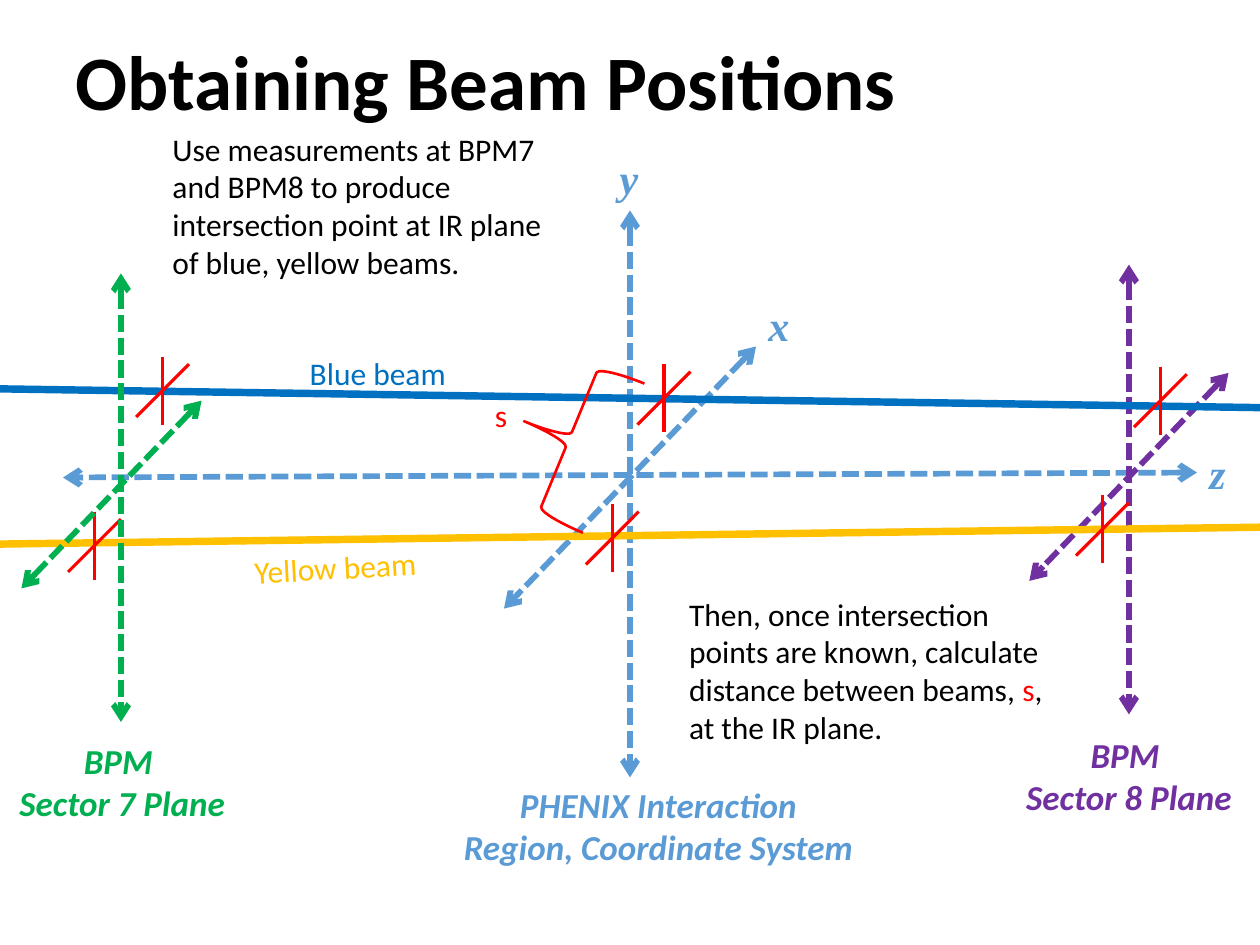
from dataclasses import dataclass

from lxml.etree import SubElement
from pptx import Presentation
from pptx.dml.color import RGBColor
from pptx.enum.dml import MSO_LINE
from pptx.enum.shapes import MSO_CONNECTOR, MSO_SHAPE
from pptx.enum.text import MSO_ANCHOR, MSO_AUTO_SIZE, PP_ALIGN
from pptx.oxml.ns import qn
from pptx.slide import Slide
from pptx.text.text import _Paragraph
from pptx.util import Inches, Pt

BLACK = RGBColor(0x00, 0x00, 0x00)
RED = RGBColor(0xFF, 0x00, 0x00)
AXIS_BLUE = RGBColor(0x5B, 0x9B, 0xD5)
BEAM_BLUE = RGBColor(0x00, 0x70, 0xC0)
BEAM_YELLOW = RGBColor(0xFF, 0xC0, 0x00)
SECTOR_GREEN = RGBColor(0x00, 0xB0, 0x50)
SECTOR_PURPLE = RGBColor(0x70, 0x30, 0xA0)

SLIDE_WIDTH = Inches(10)
SLIDE_HEIGHT = Inches(7.5)
COLUMN = SLIDE_WIDTH / 100
ROW = SLIDE_HEIGHT / 75

CROSS_SLANT = 2.1
CROSS_REACH = 2.7


@dataclass(frozen=True)
class Line:
    start: tuple[float, float]
    end: tuple[float, float]
    color: RGBColor
    weight: float = 3.25
    is_axis: bool = True


@dataclass(frozen=True)
class Label:
    area: tuple[float, float, float, float]
    lines: tuple[str, ...]
    color: RGBColor
    size: float = 18
    font: str = "Calibri"
    emphasis: bool = False
    centered: bool = False
    wrap: bool = False
    rotation: float = 0


AXES = (
    Line((50, 16.7), (50, 61.7), AXIS_BLUE),
    Line((95, 37.5), (5, 37.9), AXIS_BLUE),
    Line((60, 27.5), (40, 48.3), AXIS_BLUE),
    Line((97.5, 29.6), (81.7, 46.1), SECTOR_PURPLE),
    Line((89.6, 21), (89.6, 56.7), SECTOR_PURPLE),
)
BEAMS = (
    Line((-4.2, 30.8), (110, 32.5), BEAM_BLUE, 4.25, False),
    Line((-8.8, 43.3), (110.8, 41.7), BEAM_YELLOW, 4.25, False),
)
SECTOR_7_AXES = (
    Line((9.6, 21.7), (9.6, 57.3), SECTOR_GREEN),
    Line((16, 31.8), (1.7, 46.7), SECTOR_GREEN),
)
CROSSINGS = (
    (48.6, 42.7), (52.7, 31.6),
    (87.5, 42), (92.1, 31.8),
    (7.5, 43.3), (12.9, 31),
)
LABELS = (
    Label((95, 35, 3.3, 5), ("z",), AXIS_BLUE, 24, "Times New Roman", True),
    Label((60, 23.3, 3.7, 5), ("x",), AXIS_BLUE, 24, "Times New Roman", True),
    Label((48.2, 11.6, 3.5, 5), ("y",), AXIS_BLUE, 24, "Times New Roman", True),
    Label((35.7, 61.7, 33.1, 7.7),
          ("PHENIX Interaction", "Region, Coordinate System"),
          AXIS_BLUE, 20, emphasis=True, centered=True),
    Label((80.2, 57.7, 18.8, 7.7), ("BPM ", "Sector 8 Plane"),
          SECTOR_PURPLE, 20, emphasis=True, centered=True),
    Label((0.3, 58.2, 18.8, 7.7), ("BPM ", "Sector 7 Plane"),
          SECTOR_GREEN, 20, emphasis=True, centered=True),
    Label((12.7, 9.8, 31.5, 13.1),
          ("Use measurements at BPM7 and BPM8 to produce intersection point "
           "at IR plane of blue, yellow beams.",), BLACK, wrap=True),
    Label((23.6, 27.6, 13, 4), ("Blue beam",), BEAM_BLUE),
    Label((19.2, 43, 15, 4), ("Yellow beam",), BEAM_YELLOW, rotation=356.8),
    Label((38.3, 30.9, 3, 4), ("s",), RED),
)
DISTANCE_NOTE = Label((53.7, 46.7, 31.5, 13.1), (), BLACK, wrap=True)
DISTANCE_RUNS = (
    ("Then, once intersection points are known, calculate distance between beams, ", BLACK),
    ("s", RED),
    (", at the IR plane.", BLACK),
)


def place(*lengths: float) -> list[int]:
    return [round(length * (ROW if index % 2 else COLUMN))
            for index, length in enumerate(lengths)]


def add_run(paragraph: _Paragraph, text: str, color: RGBColor, size: float,
            font: str = "Calibri", bold: bool = False, italic: bool = False) -> None:
    run = paragraph.add_run()
    run.text = text
    run.font.name = font
    run.font.size = Pt(size)
    run.font.bold = bold
    run.font.italic = italic
    run.font.color.rgb = color


def draw_title(slide: Slide, text: str) -> None:
    title = slide.shapes.title
    title.left, title.top, title.width, title.height = place(5, 3, 90, 12.5)
    frame = title.text_frame
    frame.auto_size = MSO_AUTO_SIZE.NONE
    frame.vertical_anchor = MSO_ANCHOR.TOP
    paragraph = frame.paragraphs[0]
    paragraph.alignment = PP_ALIGN.LEFT
    paragraph.line_spacing = 0.9
    add_run(paragraph, text, BLACK, 44, bold=True)


def draw_line(slide: Slide, line: Line) -> None:
    connector = slide.shapes.add_connector(
        MSO_CONNECTOR.STRAIGHT, *place(*line.start, *line.end))
    connector.line.color.rgb = line.color
    connector.line.width = Pt(line.weight)
    SubElement(connector._element.spPr, qn("a:effectLst"))
    if line.is_axis:
        connector.line.dash_style = MSO_LINE.SQUARE_DOT
        outline = connector.line._get_or_add_ln()
        for end in ("a:headEnd", "a:tailEnd"):
            SubElement(outline, qn(end), type="arrow")


def draw_cross(slide: Slide, column: float, row: float) -> None:
    for across, down in ((CROSS_SLANT, CROSS_SLANT), (0, CROSS_REACH)):
        draw_line(slide, Line((column + across, row - down),
                              (column - across, row + down), RED, 1.75, False))


def draw_label(slide: Slide, label: Label) -> _Paragraph:
    box = slide.shapes.add_textbox(*place(*label.area))
    box.rotation = label.rotation
    frame = box.text_frame
    frame.word_wrap = label.wrap
    frame.auto_size = MSO_AUTO_SIZE.SHAPE_TO_FIT_TEXT
    paragraph = frame.paragraphs[0]
    for index, text in enumerate(label.lines):
        if index:
            paragraph = frame.add_paragraph()
        paragraph.alignment = PP_ALIGN.CENTER if label.centered else PP_ALIGN.LEFT
        add_run(paragraph, text, label.color, label.size, label.font,
                label.emphasis, label.emphasis)
    return paragraph


def draw_distance_brace(slide: Slide) -> None:
    brace = slide.shapes.add_shape(MSO_SHAPE.LEFT_BRACE, *place(41.3, 28.5, 7.7, 12.8))
    brace.shadow.inherit = False
    brace.rotation = 22.4
    brace.fill.background()
    brace.line.color.rgb = RED
    brace.line.width = Pt(1.5)


def main() -> None:
    presentation = Presentation()
    presentation.slide_width = SLIDE_WIDTH
    presentation.slide_height = SLIDE_HEIGHT
    slide = presentation.slides.add_slide(presentation.slide_layouts[5])
    draw_title(slide, "Obtaining Beam Positions")
    for line in AXES + BEAMS:
        draw_line(slide, line)
    for column, row in CROSSINGS:
        draw_cross(slide, column, row)
    draw_distance_brace(slide)
    for line in SECTOR_7_AXES:
        draw_line(slide, line)
    for label in LABELS:
        draw_label(slide, label)
    note = draw_label(slide, DISTANCE_NOTE)
    for text, color in DISTANCE_RUNS:
        add_run(note, text, color, DISTANCE_NOTE.size)
    presentation.save("out.pptx")


if __name__ == "__main__":
    main()
